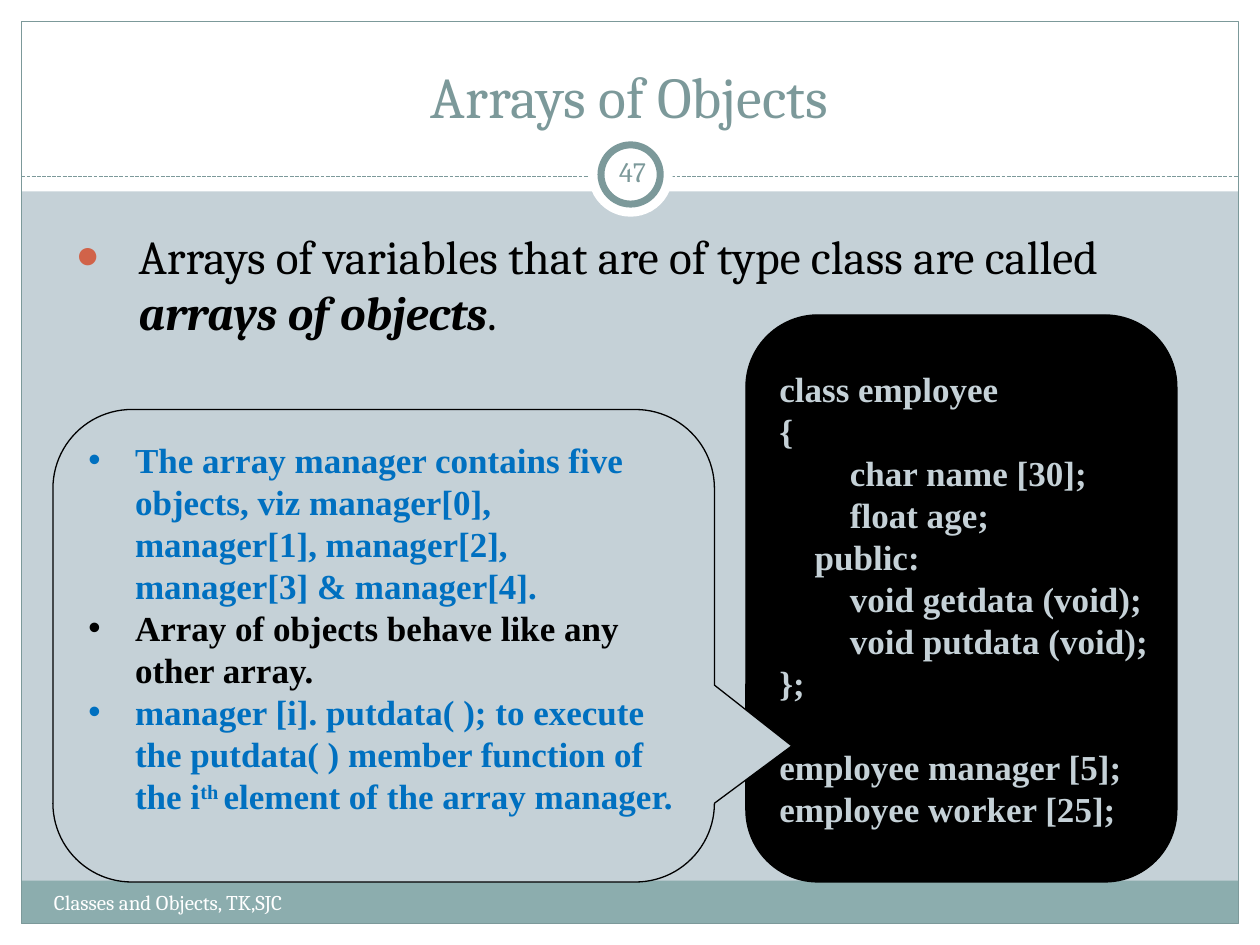
from lxml import etree
from pptx import Presentation
from pptx.dml.color import RGBColor
from pptx.enum.dml import MSO_LINE
from pptx.enum.shapes import MSO_CONNECTOR, MSO_SHAPE
from pptx.enum.text import MSO_ANCHOR as ANCHOR, MSO_AUTO_SIZE, PP_ALIGN as ALIGN
from pptx.oxml.ns import qn
from pptx.util import Inches, Pt

COLORS = {"white": "FFFFFF", "black": "000000", "mist": "C5D1D7", "teal": "7C999A",
          "band": "8CADAE", "blue": "0070C0", "rust": "D16349"}
HEADING = {"name": "Cambria", "size": Pt(33), "color": "teal"}
BODY = {"name": "Cambria", "size": Pt(27), "color": "black"}
NUMBER = {"name": "Cambria", "size": Pt(16), "color": "teal"}
FOOTER = {"name": "Cambria", "size": Pt(12), "color": "white"}
CODE = {"name": "Times New Roman", "size": Pt(20), "bold": True, "color": "mist"}
NOTE = CODE | {"color": "blue"}
CODE_LINES = [(0, "class employee"), (0, "{"), (2, "char name [30];"), (2, "float age;"),
              (1, "public:"), (2, "void getdata (void);"), (2, "void putdata (void);"),
              (0, "};"), (0, "employee manager [5];"), (0, "employee worker [25];")]
NOTES = [
    [("The array manager contains five objects, viz manager[0], manager[1], "
      "manager[2], manager[3] & manager[4].", NOTE)],
    [("Array of objects behave like any other array.", NOTE | {"color": "black"})],
    [("manager [i]. putdata( ); to execute the putdata( ) member function of the i", NOTE),
     ("th ", NOTE | {"raised": 30000}), ("element of the array manager.", NOTE)],
]


def rgb(name):
    """Return the named colour."""
    return RGBColor.from_string(COLORS[name])


def place(shape, box):
    """Move a shape to a box of left, top, width and height in inches."""
    for name, value in zip(("left", "top", "width", "height"), box):
        setattr(shape, name, Inches(value))


def add_runs(paragraph, runs):
    """Add formatted runs to a paragraph."""
    for text, style in runs:
        run = paragraph.add_run()
        run.text = text
        for name, value in style.items():
            if name == "color":
                run.font.color.rgb = rgb(value)
            elif name == "raised":
                run.font._element.set("baseline", str(value))
            else:
                setattr(run.font, name, value)


def set_frame(shape, **settings):
    """Apply text frame settings and return the frame."""
    frame = shape.text_frame
    for name, value in ({"word_wrap": True, "auto_size": MSO_AUTO_SIZE.NONE} | settings).items():
        setattr(frame, name, value)
    return frame


def add_paragraphs(frame, count):
    """Return the given number of paragraphs, reusing the first one."""
    return [frame.paragraphs[0]] + [frame.add_paragraph() for _ in range(count - 1)]


def set_bullet(paragraph, symbol, indent, color=None, percent=None):
    """Give a paragraph a hanging bullet."""
    properties = paragraph._p.get_or_add_pPr()
    properties.set("marL", str(Inches(indent)))
    properties.set("indent", str(-Inches(indent)))
    if color:
        holder = etree.SubElement(properties, qn("a:buClr"))
        etree.SubElement(holder, qn("a:srgbClr"), val=COLORS[color])
    if percent:
        etree.SubElement(properties, qn("a:buSzPct"), val=str(percent * 1000))
    etree.SubElement(properties, qn("a:buFont"), typeface="Arial")
    etree.SubElement(properties, qn("a:buChar"), char=symbol)


def add_panel(slide, kind, box, fill=None, line=None, width=0.75, adjust=()):
    """Add a flat preset shape."""
    shape = slide.shapes.add_shape(kind, *map(Inches, box))
    shape.shadow.inherit = False
    if fill:
        shape.fill.solid()
        shape.fill.fore_color.rgb = rgb(fill)
    else:
        shape.fill.background()
    if line:
        shape.line.color.rgb = rgb(line)
        shape.line.width = Pt(width)
    else:
        shape.line.fill.background()
    for index, value in enumerate(adjust):
        shape.adjustments[index] = value
    return shape


def add_backdrop(slide, box):
    """Draw the margins, header, footer band, frame and divider."""
    left, top, width, height = box
    margin = 0.17
    right, bottom = left + width - margin, top + height - margin
    inner = width - 2 * margin
    for panel in ((left, bottom, width, margin), (left, top, width, 1.52),
                  (left, top, margin, height), (right, top, margin, height)):
        add_panel(slide, MSO_SHAPE.RECTANGLE, panel, "white")
    add_panel(slide, MSO_SHAPE.RECTANGLE, (left + margin, bottom - 0.34, inner, 0.34), "band")
    add_panel(slide, MSO_SHAPE.RECTANGLE,
              (left + margin, top + margin, inner, height - 2 * margin), line="teal")
    divider = slide.shapes.add_connector(
        MSO_CONNECTOR.STRAIGHT, *map(Inches, (left + margin, top + 1.4, right, top + 1.4)))
    divider.line.color.rgb = rgb("teal")
    divider.line.width = Pt(0.75)
    divider.line.dash_style = MSO_LINE.SQUARE_DOT
    etree.SubElement(divider.element.spPr, qn("a:effectLst"))


def add_label(slide, box, text, style, align=ALIGN.LEFT, **settings):
    """Add a one-line text box."""
    label = slide.shapes.add_textbox(*map(Inches, box))
    paragraph = set_frame(label, **settings).paragraphs[0]
    paragraph.alignment = align
    add_runs(paragraph, [(text, style)])


def add_badge(slide, box, number):
    """Draw the ringed slide number."""
    left, top, size, _ = box
    add_panel(slide, MSO_SHAPE.OVAL, box, "white")
    add_panel(slide, MSO_SHAPE.OVAL, (left + 0.1, top + 0.1, size - 0.2, size - 0.2),
              "white", "teal", 4)
    insets = {f"margin_{side}": Inches(0.05) for side in ("left", "top", "right", "bottom")}
    add_label(slide, (left + 0.1, top + 0.07, 0.5, 0.48), number, NUMBER, ALIGN.CENTER,
              vertical_anchor=ANCHOR.MIDDLE, **insets)


def fill_placeholder(shape, box, runs, anchor, align):
    """Place a template placeholder in front and write its text."""
    shape.element.getparent().append(shape.element)
    place(shape, box)
    paragraph = set_frame(shape, vertical_anchor=anchor).paragraphs[0]
    paragraph.alignment = align
    add_runs(paragraph, runs)
    return paragraph


def add_code(slide, box):
    """Add the class listing on a dark panel."""
    panel = add_panel(slide, MSO_SHAPE.ROUNDED_RECTANGLE, box, "black", "black", adjust=[0.167])
    frame = set_frame(panel, word_wrap=False, vertical_anchor=ANCHOR.MIDDLE)
    for paragraph, (level, text) in zip(add_paragraphs(frame, len(CODE_LINES)), CODE_LINES):
        paragraph.alignment = ALIGN.LEFT
        paragraph._p.get_or_add_pPr().set("marL", str(Inches(0.28 * level)))
        if text.startswith("employee manager"):
            paragraph.space_before = Pt(24)
        add_runs(paragraph, [(text, CODE)])


def add_callout(slide, box):
    """Add the bulleted callout that points to the listing."""
    callout = add_panel(slide, MSO_SHAPE.ROUNDED_RECTANGULAR_CALLOUT, box, "mist", "black",
                        adjust=[0.617, 0.212, 0.167])
    frame = set_frame(callout, vertical_anchor=ANCHOR.TOP)
    for paragraph, runs in zip(add_paragraphs(frame, len(NOTES)), NOTES):
        paragraph.alignment = ALIGN.LEFT
        set_bullet(paragraph, "•", 0.37)
        add_runs(paragraph, runs)


def main():
    """Build and save the slide."""
    presentation = Presentation()
    presentation.slide_width, presentation.slide_height = Inches(10), Inches(7.5)
    slide = presentation.slides.add_slide(presentation.slide_layouts[1])
    slide.background.fill.solid()
    slide.background.fill.fore_color.rgb = rgb("mist")
    add_backdrop(slide, (0, 0, 10, 7.5))
    add_badge(slide, (4.67, 1.05, 0.67, 0.67), "47")
    fill_placeholder(slide.shapes.title, (0.33, 0.25, 9.33, 0.83),
                     [("Arrays of Objects", HEADING)], ANCHOR.BOTTOM, ALIGN.CENTER)
    definition = fill_placeholder(
        slide.placeholders[1], (0.5, 1.75, 9, 5.42),
        [("Arrays of variables that are of type class are called ", BODY),
         ("arrays of objects", BODY | {"bold": True, "italic": True}), (".", BODY)],
        ANCHOR.TOP, ALIGN.LEFT)
    set_bullet(definition, "●", 0.5, "rust", 85)
    add_code(slide, (5.92, 2.5, 3.42, 4.5))
    add_callout(slide, (0.42, 3.25, 5.25, 3.75))
    add_label(slide, (0.33, 7.01, 3.92, 0.4), "Classes and Objects, TK,SJC", FOOTER)
    presentation.save("out.pptx")


if __name__ == "__main__":
    main()
